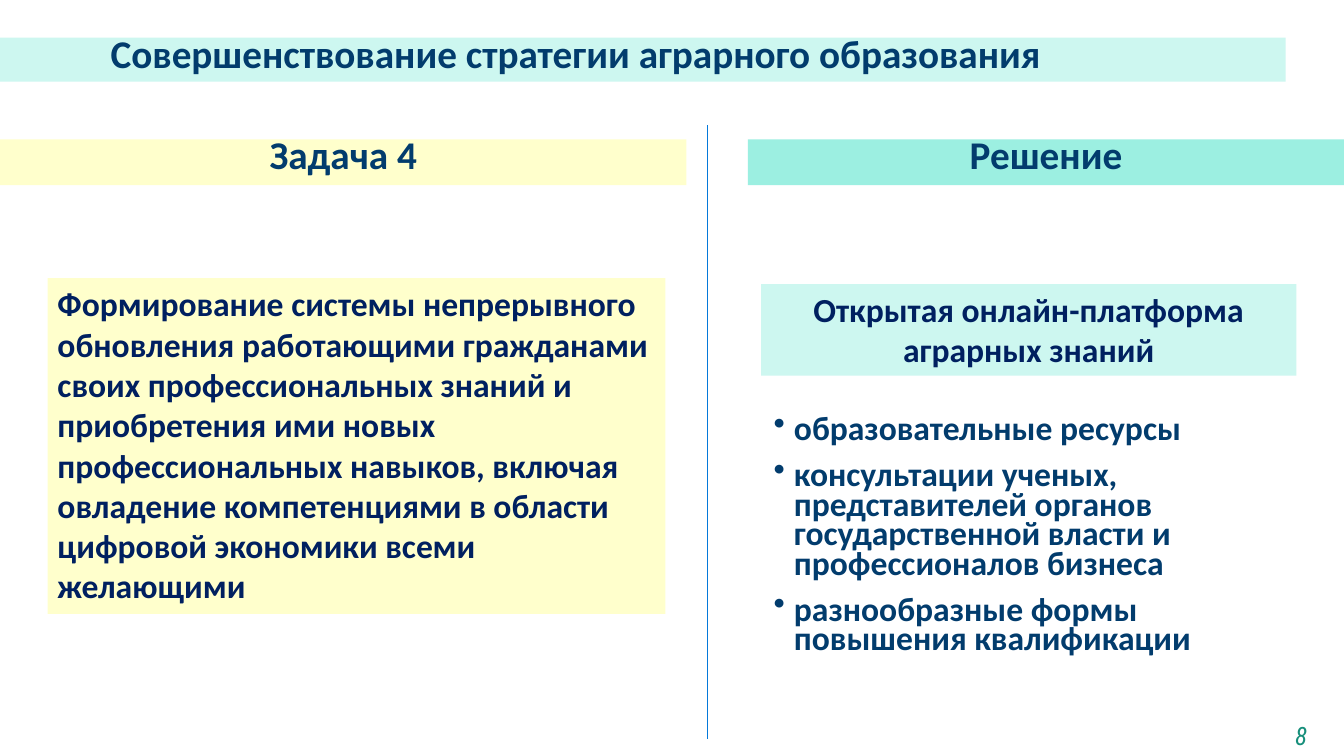
from lxml import etree
from pptx import Presentation, util as u
from pptx.dml.color import RGBColor
from pptx.enum import shapes, text
from pptx.oxml.ns import qn

NAVY, INK, GREEN = "023C6D", "002060", "178F7B"
YELLOW, MINT, AQUA = "FFFFCC", "CDF7F0", "9CEFE1"
CENTER, LEFT = text.PP_ALIGN.CENTER, text.PP_ALIGN.LEFT


def rgb(value):
    """Return the colour for a hex string."""
    return RGBColor.from_string(value)


def write(sp, lines, size, color, align=LEFT, spacing=None, font="Calibri"):
    """Fill a shape with top-anchored paragraphs in one style."""
    tf = sp.text_frame
    tf.word_wrap = True
    tf.vertical_anchor = text.MSO_ANCHOR.TOP
    tf.text = "\n".join(lines)
    for p in tf.paragraphs:
        p.alignment = align
        if spacing:
            p.line_spacing = u.Pt(spacing)
        p.font.name, p.font.size = font, u.Pt(size)
        p.font.bold = True
        p.font.color.rgb = rgb(color)
    return tf


def add_panel(slide, box, fill, line, size=24, color=INK, align=LEFT, spacing=None):
    """Add a filled rectangle with text."""
    sp = slide.shapes.add_shape(shapes.MSO_SHAPE.RECTANGLE, *map(u.Cm, box))
    sp.shadow.inherit = False
    sp.fill.solid()
    sp.fill.fore_color.rgb = rgb(fill)
    sp.line.fill.background()
    return write(sp, [line], size, color, align, spacing)


def add_heading(slide, box, fill, line, align=CENTER):
    """Add a heading band."""
    return add_panel(slide, box, fill, line, 28, NAVY, align, 24)


def add_bullets(slide, box, lines):
    """Add a bulleted list with hanging indents."""
    sp = slide.shapes.add_textbox(*map(u.Cm, box))
    for p in write(sp, lines, 24, NAVY, spacing=21).paragraphs:
        p.space_before = u.Pt(12)
        pPr = p._p.get_or_add_pPr()
        pPr.set("marL", str(u.Cm(0.51)))
        pPr.set("indent", str(-u.Cm(0.51)))
        bullet = etree.Element(qn("a:buChar"), char="•")
        pPr.find(qn("a:defRPr")).addprevious(bullet)


def add_divider(slide, x, top, bottom):
    """Add a thin vertical line."""
    line = slide.shapes.add_connector(
        shapes.MSO_CONNECTOR.STRAIGHT, u.Cm(x), u.Cm(top), u.Cm(x), u.Cm(bottom))
    line.line.color.rgb = rgb("0479DA")
    line.line.width = u.Pt(0.5)
    etree.SubElement(line._element.spPr, qn("a:effectLst"))


def add_page_number(slide, box, number):
    """Add the italic page number."""
    sp = slide.shapes.add_textbox(*map(u.Cm, box))
    p = write(sp, [number], 18, GREEN, CENTER, font="Roboto Condensed").paragraphs[0]
    p.font.bold, p.font.italic = False, True


def main():
    """Build the slide and save it."""
    prs = Presentation()
    prs.slide_width, prs.slide_height = u.Cm(33.87), u.Cm(19.05)
    slide = prs.slides.add_slide(prs.slide_layouts[6])

    add_divider(slide, 17.83, 3.15, 18.62)
    title = add_heading(slide, (0, 0.95, 32.4, 1.11), MINT,
                        "Совершенствование стратегии аграрного образования", LEFT)
    title.margin_left = u.Cm(2.79)
    add_heading(slide, (0, 3.51, 17.3, 1.16), YELLOW, "Задача 4")
    add_heading(slide, (18.85, 3.51, 15.02, 1.16), AQUA, "Решение")

    add_panel(slide, (1.2, 7.01, 15.57, 8.46), YELLOW,
              "Формирование системы непрерывного обновления работающими гражданами "
              "своих профессиональных знаний и приобретения ими новых "
              "профессиональных навыков, включая овладение компетенциями "
              "в области цифровой экономики всеми желающими")
    add_panel(slide, (19.18, 7.16, 13.49, 2.31), MINT,
              "Открытая онлайн-платформа аграрных знаний", align=CENTER)
    add_bullets(slide, (19.25, 10.41, 14.12, 6.35), [
        "образовательные ресурсы",
        "консультации ученых, представителей органов государственной власти "
        "и профессионалов бизнеса",
        "разнообразные формы повышения квалификации"])
    add_page_number(slide, (31.7, 18.03, 2.18, 1.02), "8")

    prs.save("out.pptx")


if __name__ == "__main__":
    main()
